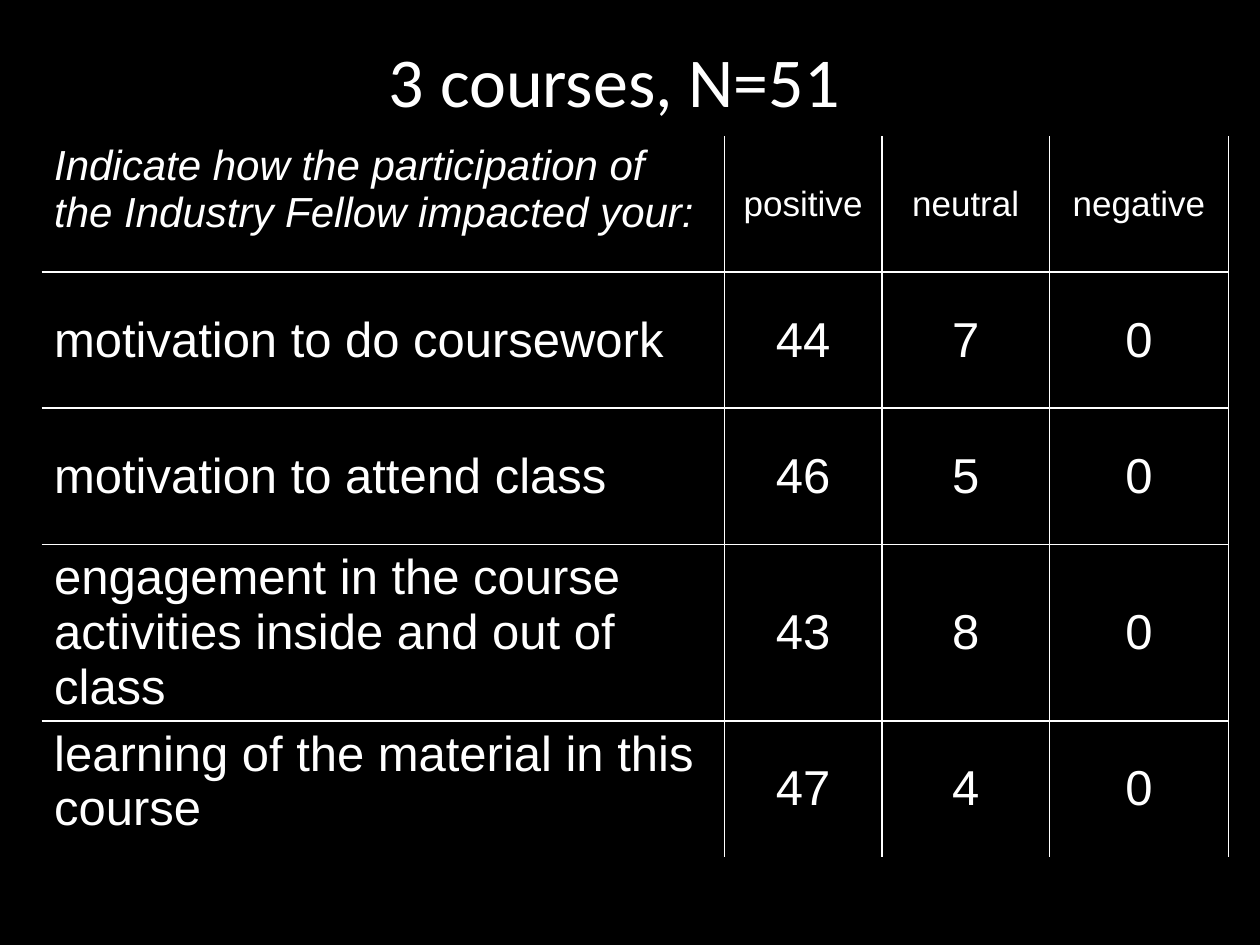
"""Build the slide of survey results on the impact of the Industry Fellow."""
from typing import NamedTuple

from lxml.etree import SubElement
from pptx import Presentation
from pptx.dml.color import RGBColor
from pptx.enum.text import MSO_ANCHOR, PP_ALIGN
from pptx.oxml.ns import qn
from pptx.table import _Cell
from pptx.text.text import Font
from pptx.util import Inches, Pt

WHITE = "FFFFFF"
BLACK = "000000"
COLUMN_WIDTHS = (5.42, 1.25, 1.33, 1.42)
ROW_HEIGHT = 1.08
QUESTION = "Indicate how the participation of the Industry Fellow impacted your:"
QUESTION_FORMAT = {"name": "Arial", "size": Pt(24), "bold": False, "italic": True}
RATING_FORMAT = {"name": "Arial", "size": Pt(20), "bold": False}
ANSWER_FORMAT = {"name": "Arial", "size": Pt(28), "bold": False}
TITLE_FORMAT = {"name": "Calibri", "size": Pt(40), "bold": False}


class SurveyRow(NamedTuple):
    label: str
    ratings: tuple
    label_format: dict = ANSWER_FORMAT
    rating_format: dict = ANSWER_FORMAT
    label_anchor: MSO_ANCHOR = MSO_ANCHOR.MIDDLE


SURVEY = (
    SurveyRow(QUESTION, ("positive", "neutral", "negative"),
              QUESTION_FORMAT, RATING_FORMAT, MSO_ANCHOR.TOP),
    SurveyRow("motivation to do coursework", (44, 7, 0)),
    SurveyRow("motivation to attend class", (46, 5, 0)),
    SurveyRow("engagement in the course activities inside and out of class",
              (43, 8, 0), label_anchor=MSO_ANCHOR.TOP),
    SurveyRow("learning of the material in this course",
              (47, 4, 0), label_anchor=MSO_ANCHOR.TOP),
)


def color(value: str) -> RGBColor:
    return RGBColor.from_string(value)


def apply_format(font: Font, values: dict) -> None:
    for attribute, value in values.items():
        setattr(font, attribute, value)
    font.color.rgb = color(WHITE)


def draw_borders(cell: _Cell, visible: dict) -> None:
    properties = cell._tc.get_or_add_tcPr()
    for side, shown in visible.items():
        line = SubElement(properties, qn(f"a:ln{side}"), w=str(Pt(1)))
        if shown:
            fill = SubElement(line, qn("a:solidFill"))
            SubElement(fill, qn("a:srgbClr"), val=WHITE)
        else:
            SubElement(line, qn("a:noFill"))


def write_cell(cell: _Cell, text: str, values: dict,
               anchor: MSO_ANCHOR, alignment: PP_ALIGN) -> None:
    cell.text = text
    cell.vertical_anchor = anchor
    cell.fill.background()
    paragraph = cell.text_frame.paragraphs[0]
    paragraph.alignment = alignment
    spacing = SubElement(paragraph._p.get_or_add_pPr(), qn("a:spcBef"))
    SubElement(spacing, qn("a:spcPct"), val="20000")
    apply_format(paragraph.runs[0].font, values)


def main() -> None:
    presentation = Presentation()
    presentation.slide_width, presentation.slide_height = Inches(10), Inches(7.5)
    slide = presentation.slides.add_slide(presentation.slide_layouts[5])
    slide.background.fill.solid()
    slide.background.fill.fore_color.rgb = color(BLACK)

    title = slide.shapes.title
    title.left, title.top = Inches(0.5), Inches(0.25)
    title.width, title.height = Inches(8.75), Inches(0.77)
    title.text = "3 courses, N=51"
    heading = title.text_frame.paragraphs[0]
    heading.alignment = PP_ALIGN.CENTER
    apply_format(heading.runs[0].font, TITLE_FORMAT)

    results = slide.shapes.add_table(
        len(SURVEY), len(COLUMN_WIDTHS), Inches(0.33), Inches(1.08),
        Inches(sum(COLUMN_WIDTHS)), Inches(ROW_HEIGHT * len(SURVEY))).table
    results.first_row = results.horz_banding = False
    for column, width in zip(results.columns, COLUMN_WIDTHS):
        column.width = Inches(width)

    for row_index, survey_row in enumerate(SURVEY):
        results.rows[row_index].height = Inches(ROW_HEIGHT)
        for column_index, entry in enumerate((survey_row.label, *survey_row.ratings)):
            cell = results.cell(row_index, column_index)
            draw_borders(cell, {"L": column_index > 0, "R": True, "T": row_index > 0,
                                "B": row_index < len(SURVEY) - 1})
            if column_index == 0:
                write_cell(cell, entry, survey_row.label_format,
                           survey_row.label_anchor, PP_ALIGN.LEFT)
            else:
                write_cell(cell, str(entry), survey_row.rating_format,
                           MSO_ANCHOR.MIDDLE, PP_ALIGN.CENTER)

    presentation.save("out.pptx")


if __name__ == "__main__":
    main()
